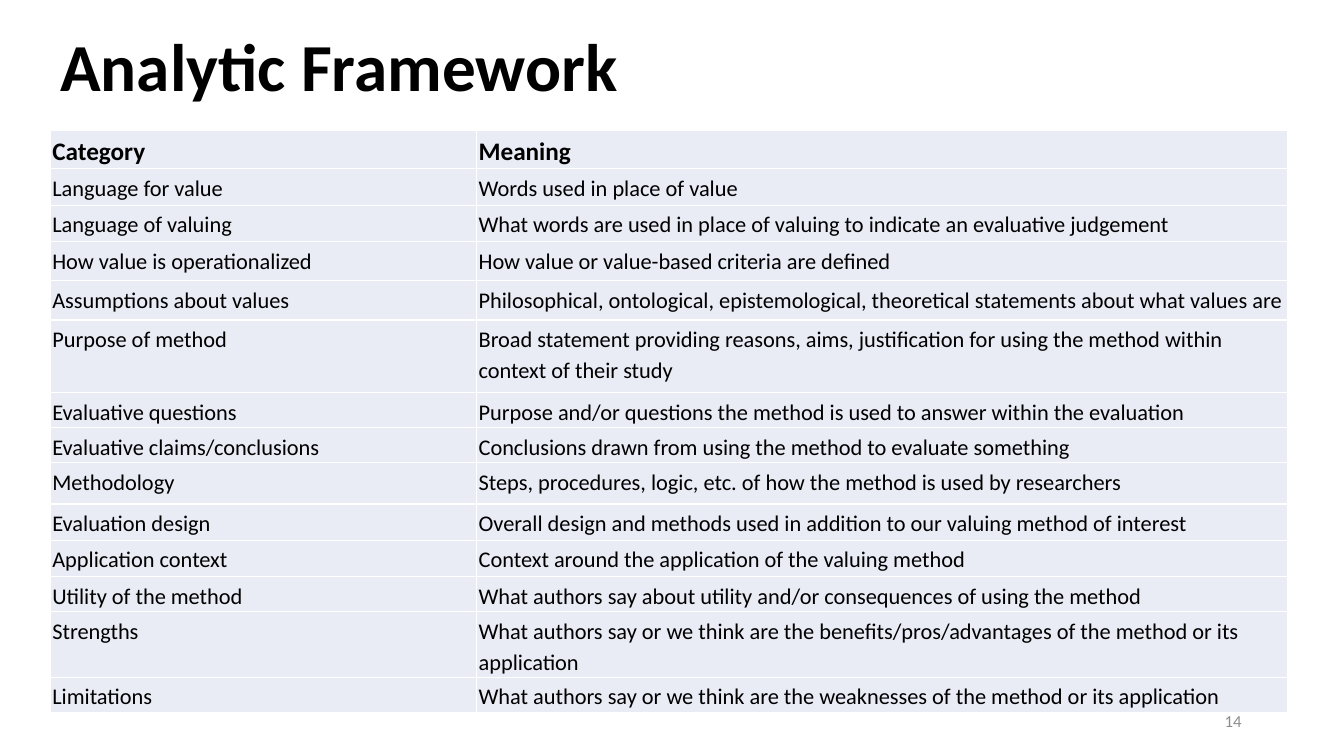
from pptx import Presentation
from pptx.dml.color import RGBColor
from pptx.enum.text import MSO_ANCHOR as Anchor, PP_ALIGN as Align
from pptx.oxml import parse_xml
from pptx.oxml.ns import nsdecls
from pptx.util import Pt

BLACK = RGBColor(0x00, 0x00, 0x00)
GREY = RGBColor(0x8C, 0x8C, 0x8C)
WHITE = RGBColor(0xFF, 0xFF, 0xFF)
PALE_BLUE = RGBColor(0xE9, 0xEB, 0xF5)

COLUMN_WIDTHS = (304.5, 579.5)
FRAMEWORK = [
    (27, "Category", "Meaning"),
    (26, "Language for value", "Words used in place of value"),
    (26, "Language of valuing",
     "What words are used in place of valuing to indicate an evaluative judgement"),
    (28, "How value is operationalized", "How value or value-based criteria are defined"),
    (28, "Assumptions about values",
     "Philosophical, ontological, epistemological, theoretical statements about what values are"),
    (52, "Purpose of method",
     "Broad statement providing reasons, aims, justification for using the method within "
     "context of their study"),
    (25, "Evaluative questions",
     "Purpose and/or questions the method is used to answer within the evaluation"),
    (25, "Evaluative claims/conclusions",
     "Conclusions drawn from using the method to evaluate something"),
    (29.5, "Methodology",
     "Steps, procedures, logic, etc. of how the method is used by researchers"),
    (26, "Evaluation design",
     "Overall design and methods used in addition to our valuing method of interest"),
    (26, "Application context", "Context around the application of the valuing method"),
    (25, "Utility of the method",
     "What authors say about utility and/or consequences of using the method"),
    (47, "Strengths",
     "What authors say or we think are the benefits/pros/advantages of the method or its "
     "application"),
    (25, "Limitations",
     "What authors say or we think are the weaknesses of the method or its application"),
]


def apply(target, settings):
    for name, value in settings.items():
        setattr(target, name, value)


class FrameworkSlide:
    """Holds the slide and its text and table style."""

    font = "Calibri"
    cell_format = dict.fromkeys(
        ("margin_left", "margin_right", "margin_top", "margin_bottom"), Pt(1.4))
    cell_format["vertical_anchor"] = Anchor.TOP

    def __init__(self, deck):
        self.slide = deck.slides.add_slide(deck.slide_layouts[6])

    def wording(self, frame, words, size, color=BLACK, bold=False, **paragraph_format):
        paragraph = frame.paragraphs[0]
        apply(paragraph, paragraph_format)
        run = paragraph.add_run()
        run.text = words
        apply(run.font, {"name": self.font, "size": Pt(size), "bold": bold})
        run.font.color.rgb = color

    def text(self, left, top, width, height, words, size, **style):
        box = self.slide.shapes.add_textbox(Pt(left), Pt(top), Pt(width), Pt(height))
        apply(box.text_frame, {"word_wrap": True, "vertical_anchor": Anchor.MIDDLE})
        self.wording(box.text_frame, words, size, **style)

    def borders(self, cell):
        properties = cell._tc.get_or_add_tcPr()
        for side in ("lnL", "lnR", "lnT", "lnB"):
            properties.append(parse_xml(
                f'<a:{side} {nsdecls("a")} w="{Pt(1)}"><a:solidFill>'
                f'<a:srgbClr val="{WHITE}"/></a:solidFill></a:{side}>'))

    def table(self, left, top, widths, entries):
        total_height = sum(height for height, *_ in entries)
        table = self.slide.shapes.add_table(
            len(entries), len(widths), Pt(left), Pt(top),
            Pt(sum(widths)), Pt(total_height)).table
        apply(table, {"first_row": False, "horz_banding": False})
        for column, width in zip(table.columns, widths):
            column.width = Pt(width)
        for index, (height, *entry) in enumerate(entries):
            heading = index == 0
            table.rows[index].height = Pt(height)
            for cell, words in zip(table.rows[index].cells, entry):
                apply(cell, self.cell_format)
                self.borders(cell)
                cell.fill.solid()
                cell.fill.fore_color.rgb = PALE_BLUE
                self.wording(cell.text_frame, words, 18 if heading else 16,
                             bold=heading, line_spacing=1.15)


def main():
    deck = Presentation()
    apply(deck, {"slide_width": Pt(960), "slide_height": Pt(540)})
    framework = FrameworkSlide(deck)
    framework.text(36, 6.5, 828, 87, "Analytic Framework", 48, bold=True, line_spacing=0.9)
    framework.table(36, 93, COLUMN_WIDTHS, FRAMEWORK)
    framework.text(678, 500.5, 216, 29, "14", 12, color=GREY, alignment=Align.RIGHT)
    deck.save("out.pptx")


if __name__ == "__main__":
    main()
